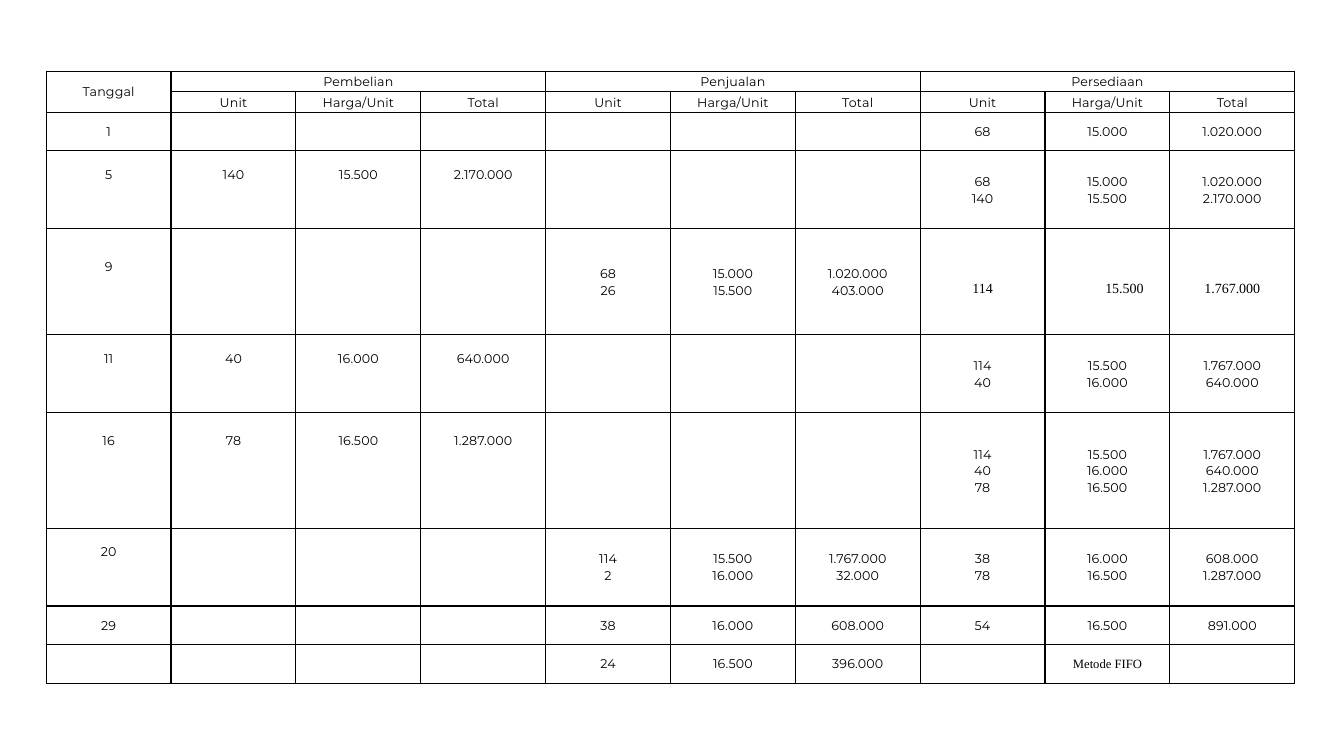
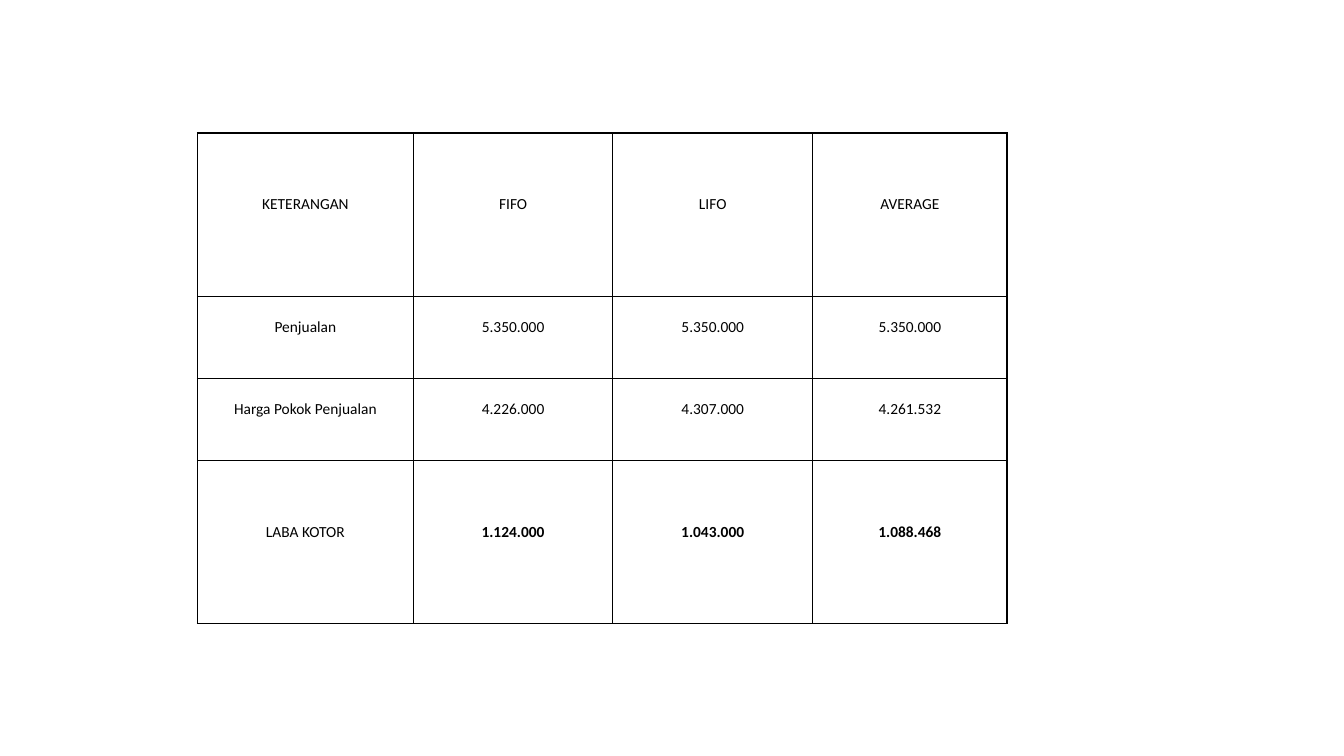
from lxml import etree
from pptx import Presentation
from pptx.dml.color import RGBColor
from pptx.enum.text import MSO_ANCHOR, PP_ALIGN
from pptx.oxml.ns import qn
from pptx.util import Pt

CENTER = PP_ALIGN.CENTER
TOP, MIDDLE = MSO_ANCHOR.TOP, MSO_ANCHOR.MIDDLE
BLACK = "000000"
BORDER_WIDTH = 1
LINE_SPACING = 1.07

LEDGER_STYLE = dict(font="Montserrat", size=9, tracking=0.1, anchor=MIDDLE, left=3.6, right=3.6)
SERIF = dict(font="Times New Roman", tracking=0)
SUMMARY_STYLE = dict(font="Calibri", size=11, anchor=TOP, left=5, right=5)

BLOCKS = ["Pembelian", "Penjualan", "Persediaan"]
BLOCK_COLUMNS = ["Unit", "Harga/Unit", "Total"]
HEADER_HEIGHT = 14.6
LEDGER = [
    (27.6, "1", 0, [], [], [(68, 15000)]),
    (55.6, "5", 22, [(140, 15500)], [], [(68, 15000), (140, 15500)]),
    (75.8, "9", 22, [], [(68, 15000), (26, 15500)], [(114, 15500)]),
    (55.7, "11", 22, [(40, 16000)], [], [(114, 15500), (40, 16000)]),
    (82.5, "16", 43, [(78, 16500)], [], [(114, 15500), (40, 16000), (78, 16500)]),
    (55.5, "20", 22, [], [(114, 15500), (2, 16000)], [(38, 16000), (78, 16500)]),
    (27.6, "29", 0, [], [(38, 16000)], [(54, 16500)]),
    (27.6, "", 0, [], [(24, 16500)], []),
]
SERIF_STOCK_DATE = "9"

SUMMARY = [
    (116.8, 43.2, ["KETERANGAN", "FIFO", "LIFO", "AVERAGE"]),
    (58.5, 14.4, ["Penjualan", "5.350.000", "5.350.000", "5.350.000"]),
    (58.4, 14.4, ["Harga Pokok Penjualan", "4.226.000", "4.307.000", "4.261.532"]),
    (117, 43.8, ["LABA KOTOR", "1.124.000", "1.043.000", "1.088.468"]),
]


def color(hex_code):
    """Turn a hex string into a colour."""
    return RGBColor.from_string(hex_code)


def add_border(cell):
    """Draw a solid line on all four sides of a cell."""
    properties = cell._tc.get_or_add_tcPr()
    for side in ("a:lnL", "a:lnR", "a:lnT", "a:lnB"):
        line = etree.SubElement(properties, qn(side), w=str(Pt(BORDER_WIDTH)))
        fill = etree.SubElement(line, qn("a:solidFill"))
        etree.SubElement(fill, qn("a:srgbClr"), val=BLACK)


def write_text(cell, text, font, size, anchor, tracking=0, bold=False,
               left=0, top=0, right=0, bottom=0):
    """Write centred lines into a cell with the given format and insets."""
    cell.vertical_anchor = anchor
    cell.margin_left, cell.margin_right = Pt(left), Pt(right)
    cell.margin_top, cell.margin_bottom = Pt(top), Pt(bottom)
    frame = cell.text_frame
    for index, words in enumerate(text.split("\n")):
        paragraph = frame.add_paragraph() if index else frame.paragraphs[0]
        paragraph.alignment = CENTER
        paragraph.line_spacing = LINE_SPACING
        if not words:
            etree.SubElement(paragraph._p, qn("a:endParaRPr"), sz=str(size * 100))
            continue
        run = paragraph.add_run()
        run.text = words
        run.font.name, run.font.size, run.font.bold = font, Pt(size), bold
        run.font.color.rgb = color(BLACK)
        run._r.get_or_add_rPr().set("spc", str(round(tracking * 100)))


def add_grid(slide, left, top, widths, heights):
    """Add a plain bordered table with the given column and row sizes."""
    grid = slide.shapes.add_table(len(heights), len(widths), Pt(left), Pt(top),
                                  Pt(sum(widths)), Pt(sum(heights))).table
    grid.first_row = grid.horz_banding = False
    for column, width in zip(grid.columns, widths):
        column.width = Pt(width)
    for row, height in zip(grid.rows, heights):
        row.height = Pt(height)
    for cell in grid.iter_cells():
        add_border(cell)
        cell.fill.background()
    return grid


def dotted(number):
    """Format a number with dots between thousands."""
    return f"{number:,}".replace(",", ".")


def lot_columns(lots):
    """Give the unit, price and total texts of a list of lots."""
    rows = [(units, price, units * price) for units, price in lots]
    return ["\n".join(dotted(row[i]) for row in rows) for i in range(3)]


def build_ledger(slide, left, top, width):
    """Build the FIFO stock ledger."""
    count = 1 + len(BLOCKS) * len(BLOCK_COLUMNS)
    heights = [HEADER_HEIGHT] * 2 + [entry[0] for entry in LEDGER]
    grid = add_grid(slide, left, top, [width / count] * count, heights)
    titles = ["Tanggal"] + [text for block in BLOCKS for text in (block, "", "")]
    for row, texts in enumerate([titles, [""] + BLOCK_COLUMNS * len(BLOCKS)]):
        for column, text in enumerate(texts):
            write_text(grid.cell(row, column), text, **LEDGER_STYLE)
    grid.cell(0, 0).merge(grid.cell(1, 0))
    for first in range(1, count, 3):
        grid.cell(0, first).merge(grid.cell(0, first + 2))

    for row, (_, date, lift, purchase, sale, stock) in enumerate(LEDGER, 2):
        texts = [date] + [text for lots in (purchase, sale, stock) for text in lot_columns(lots)]
        if not date:
            texts[8] = "Metode FIFO"
        for column, text in enumerate(texts):
            style = dict(LEDGER_STYLE, bottom=lift if column < 4 else 0)
            if column > 6 and date == SERIF_STOCK_DATE:
                style.update(SERIF, size=10, top=10, left=28 if column == 8 else 3.6)
            elif column > 6 and not date:
                style.update(SERIF)
            write_text(grid.cell(row, column), text, **style)


def build_summary(slide, left, top, widths):
    """Build the gross profit comparison of the three methods."""
    grid = add_grid(slide, left, top, widths, [entry[0] for entry in SUMMARY])
    for row, (_, inset, texts) in enumerate(SUMMARY):
        for column, text in enumerate(texts):
            profit = row == len(SUMMARY) - 1 and column > 0
            write_text(grid.cell(row, column), text, top=inset, bold=profit, **SUMMARY_STYLE)


def main():
    """Build both slides and save the deck."""
    deck = Presentation()
    deck.slide_width, deck.slide_height = Pt(960), Pt(540)
    blank = deck.slide_layouts[6]
    build_ledger(deck.slides.add_slide(blank), 33, 51, 892)
    build_summary(deck.slides.add_slide(blank), 141, 95, [154.4, 142.3, 142.9, 138.7])
    deck.save("out.pptx")


if __name__ == "__main__":
    main()
